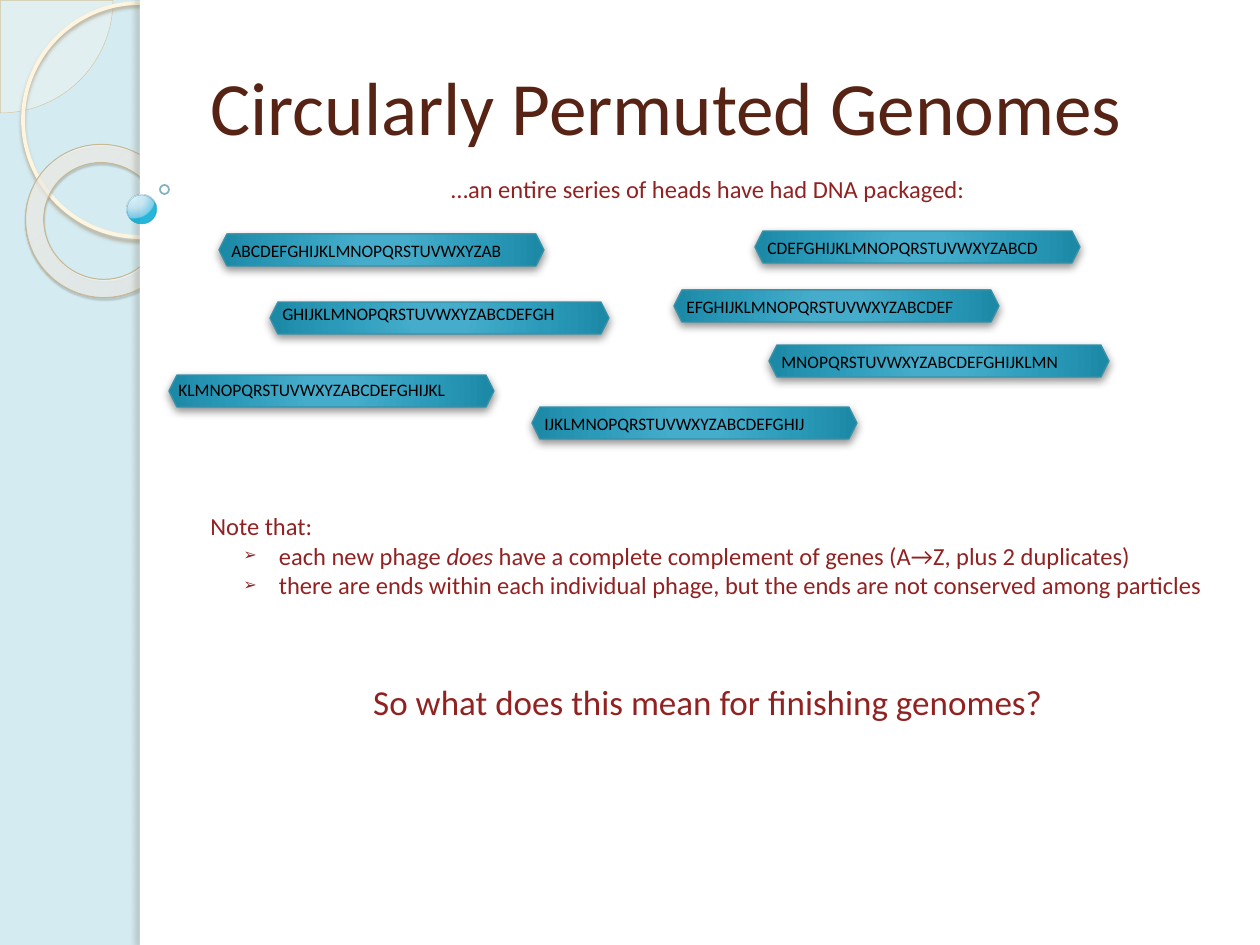
from dataclasses import dataclass

from lxml import etree
from pptx import Presentation
from pptx.dml.color import RGBColor
from pptx.enum import shapes, text
from pptx.oxml import ns
from pptx.util import Emu, Pt

PX = 914400 / 126
MSO = shapes.MSO_SHAPE
ALPHABET = "ABCDEFGHIJKLMNOPQRSTUVWXYZ"
GENOME_LENGTH = 28


@dataclass(frozen=True)
class Theme:
    font: str = "Calibri"
    background: str = "D4EBF1"
    panel: str = "FFFFFF"
    title: str = "572314"
    body: str = "922222"
    label: str = "000000"
    genome_line: str = "3891A7"
    title_size: int = 43
    question_size: int = 20
    body_size: int = 14
    label_size: int = 10
    genome_stops: tuple = ((0, "45ACCC", 100), (15, "45ACCB", 100), (62, "2B9AB9", 100),
                           (97, "1C8AA7", 100), (100, "0E89A7", 100))
    donut_stops: tuple = ((0, "FFFCF6", 70), (70, "FFFEFB", 55), (100, "F0D28E", 60))
    bead_stops: tuple = ((0, "DAF4FF", 95), (50, "C3E3F0", 90), (95, "6BC7E8", 88),
                         (100, "00ABD5", 85))


THEME = Theme()


def px(n):
    return Emu(round(n * PX))


def box(*lengths):
    return [px(n) for n in lengths]


def sub(parent, tag, **attrs):
    return etree.SubElement(parent, ns.qn(tag), {k: str(v) for k, v in attrs.items()})


def add_color(parent, color, alpha):
    sub(sub(parent, "a:srgbClr", val=color), "a:alpha", val=alpha * 1000)


def set_alpha(sp, line, alpha):
    spPr = sp._element.spPr
    holder = spPr.find(ns.qn("a:ln")) if line else spPr
    sub(holder.find(ns.qn("a:solidFill"))[0], "a:alpha", val=alpha * 1000)


def set_gradient(sp, stops, focus):
    sp.fill.solid()
    spPr = sp._element.spPr
    solid = spPr.find(ns.qn("a:solidFill"))
    grad = etree.Element(ns.qn("a:gradFill"), rotWithShape="1")
    stop_list = sub(grad, "a:gsLst")
    for pos, color, alpha in stops:
        add_color(sub(stop_list, "a:gs", pos=pos * 1000), color, alpha)
    sides = {side: n * 1000 for side, n in zip("ltrb", focus)}
    sub(sub(grad, "a:path", path="circle"), "a:fillToRect", **sides)
    spPr.replace(solid, grad)


def set_shadow(sp, color, alpha, blur, dist, angle):
    effects = sp._element.spPr.find(ns.qn("a:effectLst"))
    shadow = sub(effects, "a:outerShdw", blurRad=Pt(blur), dist=Pt(dist),
                 dir=angle * 60000, algn="ctr", rotWithShape=0)
    add_color(shadow, color, alpha)


def add_figure(parent, kind, place, fill=None, line=None, width=1.0):
    sp = parent.add_shape(kind, *box(*place))
    sp.shadow.inherit = False
    if fill:
        sp.fill.solid()
        sp.fill.fore_color.rgb = RGBColor.from_string(fill)
    else:
        sp.fill.background()
    if line:
        sp.line.color.rgb = RGBColor.from_string(line)
        sp.line.width = Pt(width)
    else:
        sp.line.fill.background()
    return sp


def style_paragraph(p, size, color, align=text.PP_ALIGN.LEFT):
    p.alignment = align
    p.font.name = THEME.font
    p.font.size = Pt(size)
    p.font.color.rgb = RGBColor.from_string(color)


def add_text(parent, place, words, size, color, align=text.PP_ALIGN.LEFT,
             anchor=text.MSO_ANCHOR.TOP):
    tf = parent.add_textbox(*box(*place)).text_frame
    tf.word_wrap = True
    tf.vertical_anchor = anchor
    p = tf.paragraphs[0]
    p.add_run().text = words
    style_paragraph(p, size, color, align)
    return tf


def add_bullet(tf, runs):
    p = tf.add_paragraph()
    for words, italic in runs:
        r = p.add_run()
        r.text = words
        if italic:
            r.font.italic = True
    style_paragraph(p, THEME.body_size, THEME.body)
    pPr = p._p.get_or_add_pPr()
    pPr.set("marL", str(px(63)))
    pPr.set("indent", str(-px(30)))
    marks = [etree.Element(ns.qn("a:buSzPct"), val="66000"),
             etree.Element(ns.qn("a:buFont"), typeface="Arial"),
             etree.Element(ns.qn("a:buChar"), char="➢")]
    for i, mark in enumerate(marks):
        pPr.insert(i, mark)


def add_genome(slide, start, left, top, width=325, label_shift=(0, 0)):
    group = slide.shapes.add_group_shape().shapes
    sp = add_figure(group, MSO.HEXAGON, (left, top, width, 32),
                    line=THEME.genome_line, width=0.75)
    set_gradient(sp, THEME.genome_stops, (50, 50, 50, 50))
    set_shadow(sp, "000000", 43, 5, 2, 90)
    first = ALPHABET.index(start)
    letters = (ALPHABET * 2)[first:first + GENOME_LENGTH]
    dx, dy = label_shift
    add_text(group, (left + dx, top + dy, 364, 55), letters,
             THEME.label_size, THEME.label)


def add_decoration(slide):
    tree = slide.shapes
    pie = add_figure(tree, MSO.PIE, (-112, -112, 225, 225), "FEFAF4", "D3C39F", 0.25)
    pie.adjustments[0] = 0
    pie.adjustments[1] = 54
    set_alpha(pie, False, 33)

    ring = add_figure(tree, MSO.OVAL, (23, 3, 234, 234), line="FFF5DE", width=2.15)
    set_shadow(ring, "B0A68F", 85, 2, 2, 90)

    donut = add_figure(tree, MSO.DONUT, (25, 145, 155, 152), line="C7B893", width=0.58)
    donut.adjustments[0] = 0.12
    donut.rotation = 38.6
    set_gradient(donut, THEME.donut_stops, (-408, -50, 508, 150))
    set_shadow(donut, "5A5444", 35, 1, 1.2, 75)

    add_figure(tree, MSO.RECTANGLE, (140, 0, 1120, 945), THEME.panel)
    edge = add_figure(tree, MSO.RECTANGLE, (140, 0, 10, 945), THEME.panel)
    set_shadow(edge, "736F63", 25, 3, 3, 180)

    bead = add_figure(tree, MSO.OVAL, (127, 195, 29, 29), line="308EA5", width=0.16)
    set_gradient(bead, THEME.bead_stops, (25, 12, 75, 88))
    set_alpha(bead, True, 60)
    bubble = add_figure(tree, MSO.OVAL, (160, 185, 9, 9), line="318093")
    set_alpha(bubble, True, 60)


def main():
    prs = Presentation()
    prs.slide_width, prs.slide_height = box(1260, 945)
    slide = prs.slides.add_slide(prs.slide_layouts[6])
    slide.background.fill.solid()
    slide.background.fill.fore_color.rgb = RGBColor.from_string(THEME.background)
    add_decoration(slide)

    add_text(slide.shapes, (198, 49, 1020, 108), "Circularly Permuted Genomes",
             THEME.title_size, THEME.title, anchor=text.MSO_ANCHOR.BOTTOM)
    add_text(slide.shapes, (198, 168, 1020, 63),
             "…an entire series of heads have had DNA packaged:",
             THEME.body_size, THEME.body, text.PP_ALIGN.CENTER)

    add_genome(slide, "C", 755, 231)
    add_genome(slide, "A", 219, 234)
    add_genome(slide, "G", 270, 302, 339, (0, -5))
    add_genome(slide, "E", 674, 290)
    add_genome(slide, "I", 532, 407)
    add_genome(slide, "M", 769, 345, 340)
    add_genome(slide, "K", 169, 375, label_shift=(-3, -2))

    notes = add_text(slide.shapes, (198, 505, 1020, 123), "Note that:",
                     THEME.body_size, THEME.body)
    add_bullet(notes, [(" each new phage ", False), ("does", True),
                       (" have a complete complement of genes (A→Z, plus 2 duplicates)", False)])
    add_bullet(notes, [(" there are ends within each individual phage, "
                        "but the ends are not conserved among particles", False)])

    add_text(slide.shapes, (198, 674, 1020, 77),
             "So what does this mean for finishing genomes?",
             THEME.question_size, THEME.body, text.PP_ALIGN.CENTER)
    prs.save("out.pptx")


if __name__ == "__main__":
    main()
